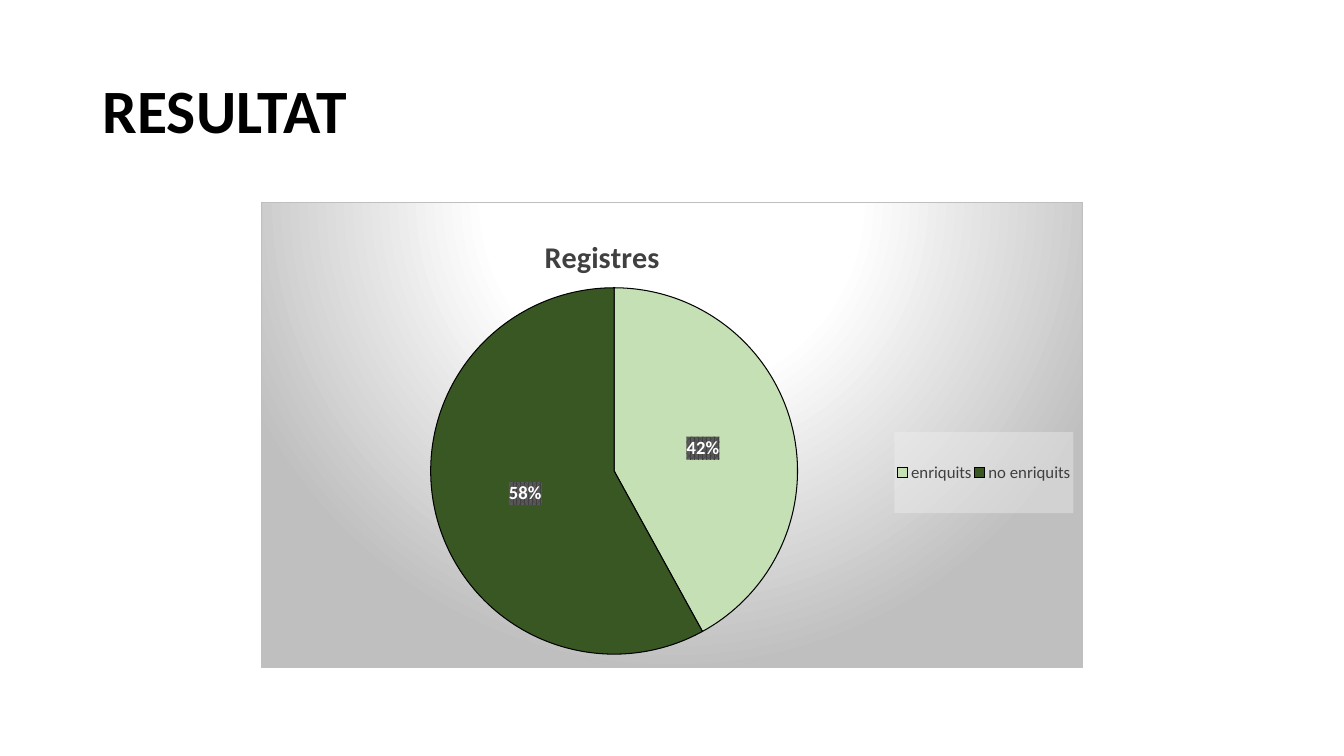
"""Build the RESULTAT slide with a pie chart of enriched records."""
import dataclasses
import typing

import lxml.etree
import pptx
import pptx.chart.data
import pptx.dml.color
import pptx.enum.chart
import pptx.enum.text
import pptx.oxml
import pptx.oxml.ns
import pptx.util

Inches = pptx.util.Inches
Pt = pptx.util.Pt
qn = pptx.oxml.ns.qn
NS = pptx.oxml.ns.nsdecls("c", "a")


@dataclasses.dataclass(frozen=True)
class Theme:
    font: str = "Calibri"
    black: str = "000000"
    white: str = "FFFFFF"
    text: str = "404040"
    grey: str = "BFBFBF"
    legend_fill: str = "F2F2F2"
    label_back: str = "595959"
    title_size: float = 44
    chart_title_size: float = 21.6
    label_size: float = 13.3
    legend_size: float = 12
    base_size: float = 10


@dataclasses.dataclass(frozen=True)
class Slice:
    name: str
    value: int
    color: str


class Box(typing.NamedTuple):
    x: float
    y: float
    w: float
    h: float


THEME = Theme()
SLICES = [Slice("enriquits", 42, "C5E0B4"), Slice("no enriquits", 58, "385723")]
TITLE_BOX = Box(0.92, 0.4, 11.5, 1.45)
CHART_BOX = Box(2.59, 2, 8.15, 4.63)
PIE_AREA = Box(0.206, 0.183, 0.447, 0.789)
LEGEND_AREA = Box(0.771, 0.494, 0.218, 0.174)


def rgb(color: str) -> pptx.dml.color.RGBColor:
    return pptx.dml.color.RGBColor.from_string(color)


def format_font(font: typing.Any, size: float, color: str, bold: bool = False) -> None:
    values = {"name": THEME.font, "size": Pt(size), "bold": bold}
    for name, value in values.items():
        setattr(font, name, value)
    font.color.rgb = rgb(color)


def solid(color: str, extra: str = "") -> str:
    return f'<a:solidFill><a:srgbClr val="{color}">{extra}</a:srgbClr></a:solidFill>'


def sp_pr(content: str) -> lxml.etree._Element:
    return pptx.oxml.parse_xml(f"<c:spPr {NS}>{content}</c:spPr>")


def layout(kind: str, **fractions: float) -> lxml.etree._Element:
    modes = "".join(f'<c:{k}Mode val="edge"/>' for k in "xy")
    sizes = "".join(f'<c:{k} val="{v}"/>' for k, v in fractions.items())
    target = f'<c:layoutTarget val="{kind}"/>' if kind else ""
    return pptx.oxml.parse_xml(
        f"<c:layout {NS}><c:manualLayout>{target}{modes}{sizes}</c:manualLayout></c:layout>"
    )


def place(parent: lxml.etree._Element, new: lxml.etree._Element) -> None:
    for old in parent.findall(qn("c:layout")):
        parent.remove(old)
    overlay = parent.find(qn("c:overlay"))
    if overlay is None:
        parent.insert(0, new)
    else:
        overlay.addprevious(new)


def add_title(slide: typing.Any) -> None:
    sp = slide.shapes.title
    sp.left, sp.top, sp.width, sp.height = map(Inches, TITLE_BOX)
    tf = sp.text_frame
    tf.vertical_anchor = pptx.enum.text.MSO_ANCHOR.MIDDLE
    p = tf.paragraphs[0]
    p.alignment = pptx.enum.text.PP_ALIGN.LEFT
    p.line_spacing = 0.9
    r = p.add_run()
    r.text = "RESULTAT"
    format_font(r.font, THEME.title_size, THEME.black, True)


def style_series(plot: typing.Any) -> None:
    plot.vary_by_categories = True
    for i, item in enumerate(SLICES):
        fmt = plot.series[0].points[i].format
        fmt.fill.solid()
        fmt.fill.fore_color.rgb = rgb(item.color)
        fmt.line.color.rgb = rgb(THEME.black)
        fmt.line.width = Pt(0.75)
    labels = plot.series[0].data_labels
    values = {
        "show_percentage": True,
        "show_value": False,
        "number_format": "0%",
        "number_format_is_linked": False,
        "position": pptx.enum.chart.XL_LABEL_POSITION.CENTER,
    }
    for name, value in values.items():
        setattr(labels, name, value)
    format_font(labels.font, THEME.label_size, THEME.white, True)
    pattern = (
        f'<a:pattFill prst="pct75"><a:fgClr><a:srgbClr val="{THEME.text}"/></a:fgClr>'
        f'<a:bgClr><a:srgbClr val="{THEME.label_back}"/></a:bgClr></a:pattFill>'
    )
    labels._element.find(qn("c:txPr")).addprevious(sp_pr(pattern))


def style_legend(chart: typing.Any) -> None:
    chart.has_legend = True
    legend = chart.legend
    legend.position = pptx.enum.chart.XL_LEGEND_POSITION.RIGHT
    legend.include_in_layout = False
    format_font(legend.font, THEME.legend_size, THEME.text)
    place(legend._element, layout("", **LEGEND_AREA._asdict()))
    fill = solid(THEME.legend_fill, '<a:alpha val="39000"/>')
    legend._element.find(qn("c:txPr")).addprevious(sp_pr(fill))


def style_background(chart: typing.Any) -> None:
    stops = "".join(
        f'<a:gs pos="{pos}"><a:srgbClr val="{color}"/></a:gs>'
        for pos, color in [(0, THEME.white), (39000, THEME.white), (100000, THEME.grey)]
    )
    gradient = (
        f'<a:gradFill><a:gsLst>{stops}</a:gsLst><a:path path="circle">'
        '<a:fillToRect l="50000" t="-80000" r="50000" b="180000"/></a:path></a:gradFill>'
    )
    border = f'<a:ln w="{Pt(0.75)}">{solid(THEME.grey)}</a:ln>'
    chart._chartSpace.find(qn("c:chart")).addnext(sp_pr(gradient + border))


def add_pie(slide: typing.Any) -> None:
    data = pptx.chart.data.CategoryChartData()
    data.categories = [item.name for item in SLICES]
    data.add_series("Series 1", [item.value for item in SLICES])
    kind = pptx.enum.chart.XL_CHART_TYPE.PIE
    chart = slide.shapes.add_chart(kind, *map(Inches, CHART_BOX), data).chart
    format_font(chart.font, THEME.base_size, THEME.black)
    chart.has_title = True
    r = chart.chart_title.text_frame.paragraphs[0].add_run()
    r.text = "Registres"
    format_font(r.font, THEME.chart_title_size, THEME.text, True)
    place(chart.chart_title._element, layout("", x=0.338, y=0.06))
    plot_area = chart._chartSpace.find(qn("c:chart")).find(qn("c:plotArea"))
    place(plot_area, layout("inner", **PIE_AREA._asdict()))
    style_series(chart.plots[0])
    style_legend(chart)
    style_background(chart)


def main() -> None:
    prs = pptx.Presentation()
    prs.slide_width, prs.slide_height = Inches(13.33), Inches(7.5)
    slide = prs.slides.add_slide(prs.slide_layouts[5])
    add_title(slide)
    add_pie(slide)
    prs.save("out.pptx")


if __name__ == "__main__":
    main()
